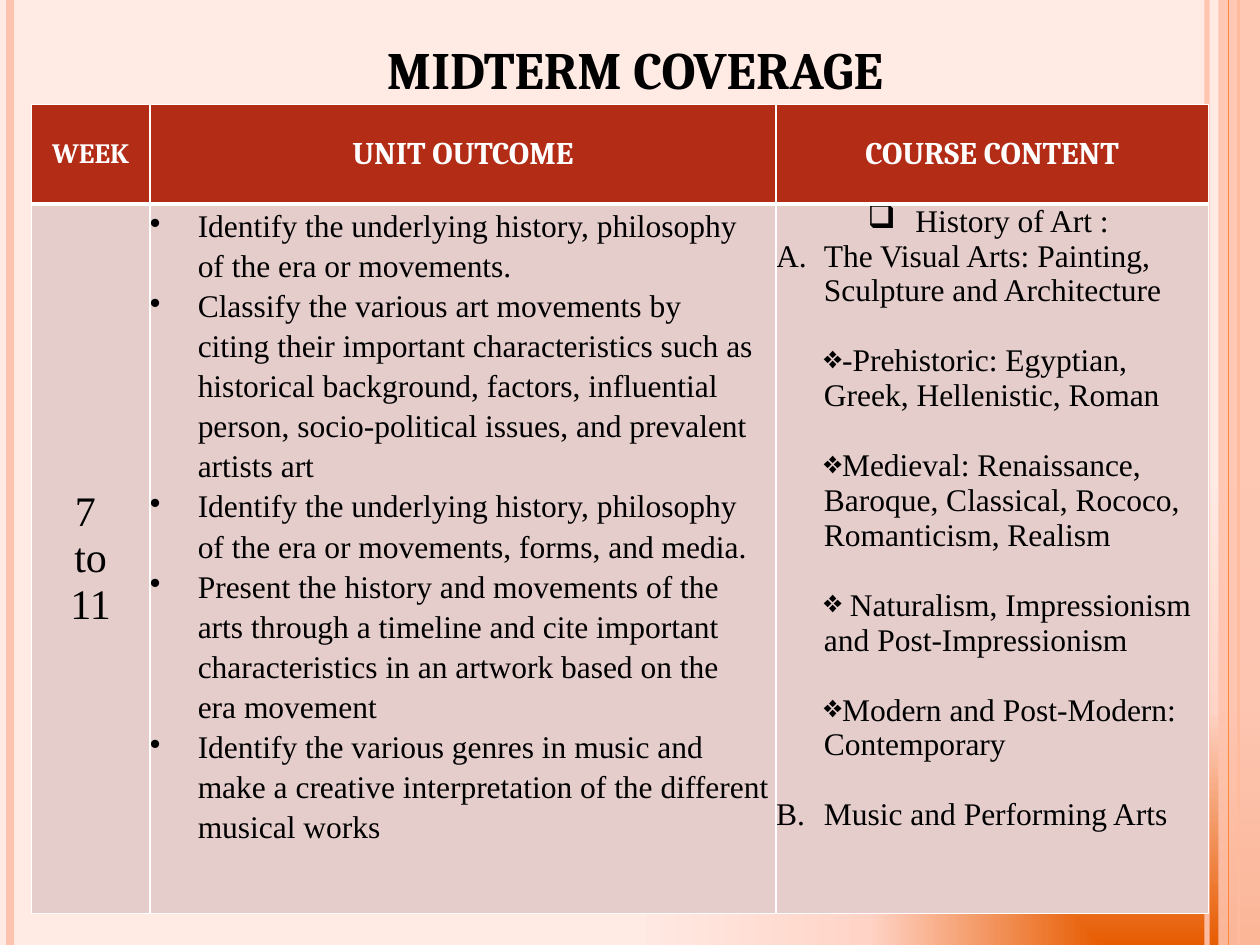
import dataclasses

import lxml.etree
import pptx
import pptx.dml.color
import pptx.enum.shapes
import pptx.enum.text
import pptx.oxml
import pptx.oxml.ns
import pptx.util

Inches = pptx.util.Inches
Align = pptx.enum.text.PP_ALIGN
Anchor = pptx.enum.text.MSO_ANCHOR
qn = pptx.oxml.ns.qn


@dataclasses.dataclass(frozen=True)
class Theme:
    heading_font: str = "Cambria"
    body_font: str = "Times New Roman"
    title_size: int = 30
    week_size: int = 24
    body_size: int = 18
    label_size: int = 16
    black: str = "000000"
    white: str = "FFFFFF"
    header: str = "B32C16"
    body: str = "E5CDCC"
    pale: str = "FEC3AE"
    orange: str = "FE8637"
    gradient: tuple = ((0, "E75C01"), (50, "FFD4C7"), (100, "FFEAE4"))


class SlideBuilder:
    """Draws styled elements on the current slide."""

    def __init__(self, slide, theme):
        self.slide = slide
        self.theme = theme

    def color(self, value):
        return pptx.dml.color.RGBColor.from_string(value)

    def apply(self, target, values):
        for name, value in values.items():
            setattr(target, name, value)

    def child(self, parent, tag, **attributes):
        element = lxml.etree.SubElement(parent, qn(tag))
        for name, value in attributes.items():
            element.set(name, str(value))
        return element

    def background(self):
        self.slide.background.fill.gradient()
        gradient = self.slide.element.find(".//" + qn("a:gradFill"))
        for element in list(gradient):
            gradient.remove(element)
        stops = self.child(gradient, "a:gsLst")
        for position, value in self.theme.gradient:
            stop = self.child(stops, "a:gs", pos=position * 1000)
            self.child(stop, "a:srgbClr", val=value)
        route = self.child(gradient, "a:path", path="rect")
        self.child(route, "a:fillToRect", l=100000, t=100000)

    def transparency(self, shape, alpha):
        color = shape.element.spPr.find(".//" + qn("a:srgbClr"))
        self.child(color, "a:alpha", val=alpha * 1000)

    def vertical_line(self, left, width, value, alpha=100):
        line = self.slide.shapes.add_connector(
            pptx.enum.shapes.MSO_CONNECTOR.STRAIGHT,
            Inches(left), 0, Inches(left), Inches(7.5))
        line.line.width = pptx.util.Pt(width)
        line.line.color.rgb = self.color(value)
        self.child(line.element.spPr, "a:effectLst")
        if alpha < 100:
            self.transparency(line, alpha)

    def band(self, left, top, width, height, value, alpha):
        shape = self.slide.shapes.add_shape(
            pptx.enum.shapes.MSO_SHAPE.RECTANGLE,
            Inches(left), Inches(top), Inches(width), Inches(height))
        shape.shadow.inherit = False
        shape.fill.solid()
        shape.fill.fore_color.rgb = self.color(value)
        shape.line.fill.background()
        self.transparency(shape, alpha)

    def set_text(self, paragraph, text, font, layout):
        paragraph.text = text
        self.apply(paragraph, layout)
        for run in paragraph.runs:
            self.apply(run.font, {**font, "size": pptx.util.Pt(font["size"])})
            run.font.color.rgb = self.color(self.theme.black)

    def title(self, text, left, top, width, height):
        box = self.slide.shapes.add_textbox(
            Inches(left), Inches(top), Inches(width), Inches(height))
        self.apply(box.text_frame, {"word_wrap": True, "vertical_anchor": Anchor.MIDDLE})
        font = {"name": self.theme.heading_font, "size": self.theme.title_size, "bold": True}
        self.set_text(box.text_frame.paragraphs[0], text, font, {"alignment": Align.CENTER})

    def table(self, left, top, columns, rows):
        frame = self.slide.shapes.add_table(
            len(rows), len(columns), Inches(left), Inches(top),
            Inches(sum(columns)), Inches(sum(rows)))
        for column, width in zip(frame.table.columns, columns):
            column.width = Inches(width)
        for row, height in zip(frame.table.rows, rows):
            row.height = Inches(height)
        return frame.table

    def cell(self, cell, fill, top_border, bottom_border):
        cell.fill.solid()
        cell.fill.fore_color.rgb = self.color(fill)
        properties = cell._tc.get_or_add_tcPr()
        borders = {"a:lnL": 1, "a:lnR": 1, "a:lnT": top_border, "a:lnB": bottom_border}
        for index, (tag, width) in enumerate(borders.items()):
            border = self.child(properties, tag, w=pptx.util.Pt(width))
            solid = self.child(border, "a:solidFill")
            self.child(solid, "a:srgbClr", val=self.theme.white)
            properties.insert(index, border)

    def header_cell(self, cell, text, size):
        self.cell(cell, self.theme.header, 1, 3)
        cell.vertical_anchor = Anchor.MIDDLE
        paragraph = cell.text_frame.paragraphs[0]
        font = {"name": self.theme.heading_font, "size": size, "bold": True}
        self.set_text(paragraph, text, font, {"alignment": Align.CENTER})
        paragraph.runs[0].font.color.rgb = self.color(self.theme.white)

    def body_cell(self, cell, items, size, anchor=Anchor.TOP):
        self.cell(cell, self.theme.body, 3, 1)
        self.apply(cell, {"margin_left": 0, "margin_top": 0, "margin_right": 0,
                          "margin_bottom": 0, "vertical_anchor": anchor})
        font = {"name": self.theme.body_font, "size": size, "bold": False}
        for index, (text, bullet, layout) in enumerate(items):
            frame = cell.text_frame
            paragraph = frame.add_paragraph() if index else frame.paragraphs[0]
            self.set_text(paragraph, text, font, layout)
            if bullet:
                self.bullet(paragraph, **bullet)

    def bullet(self, paragraph, hanging=True, char=None, start=1):
        properties = paragraph._p.get_or_add_pPr()
        properties.set("marL", str(Inches(0.38)))
        properties.set("indent", str(-Inches(0.38) if hanging else 0))
        if char:
            self.child(properties, "a:buChar", char=char)
        else:
            self.child(properties, "a:buAutoNum", type="alphaUcPeriod", startAt=start)


OUTCOMES = [
    "Identify the underlying history, philosophy\vof the era or movements.",
    "Classify the various art movements by\vciting their important characteristics such as "
    "historical background, factors, influential person, socio-political issues, and "
    "prevalent artists art",
    "Identify the underlying history, philosophy\vof the era or movements, forms, and media.",
    "Present the history and movements of the\varts through a timeline and cite important "
    "characteristics in an artwork based on the\vera movement",
    "Identify the various genres in music and make a creative interpretation of the "
    "different musical works",
]
PERIODS = [
    "-Prehistoric: Egyptian, Greek, Hellenistic, Roman",
    "Medieval: Renaissance, Baroque, Classical, Rococo, Romanticism, Realism",
    " Naturalism, Impressionism and Post-Impressionism",
    "Modern and Post-Modern: Contemporary",
]


def main():
    presentation = pptx.Presentation()
    presentation.slide_width = Inches(10)
    presentation.slide_height = Inches(7.5)
    theme = Theme()
    builder = SlideBuilder(presentation.slides.add_slide(presentation.slide_layouts[6]), theme)

    builder.background()
    builder.vertical_line(9.58, 3, theme.pale, alpha=93)
    builder.vertical_line(0.08, 4.5, theme.pale)
    builder.vertical_line(9.83, 1.5, theme.orange)
    builder.band(9.67, 0, 0.33, 7.5, theme.pale, alpha=87)
    builder.vertical_line(9.75, 0.75, theme.orange)
    builder.title("MIDTERM COVERAGE", 0.5, 0.17, 9.08, 0.75)

    table = builder.table(0.25, 0.83, [0.94, 4.97, 3.43], [0.79, 5.63])
    headings = {"WEEK": theme.label_size, "UNIT OUTCOME": theme.body_size,
                "COURSE CONTENT": theme.body_size}
    for column, (text, size) in enumerate(headings.items()):
        builder.header_cell(table.cell(0, column), text, size)

    centered = {"alignment": Align.CENTER}
    spaced = {"space_before": pptx.util.Pt(20)}
    weeks = [(text, None, centered) for text in ("7 ", "to", "11")]
    outcomes = [(text, {"char": "•"}, {"line_spacing": 1.15}) for text in OUTCOMES]
    contents = [
        ("History of Art : ", {"char": "❑"}, centered),
        ("The Visual Arts: Painting, Sculpture and Architecture", {"start": 1}, {}),
        *((text, {"char": "❖", "hanging": False}, spaced) for text in PERIODS),
        ("Music and Performing Arts", {"start": 2}, spaced),
    ]
    builder.body_cell(table.cell(1, 0), weeks, theme.week_size, Anchor.MIDDLE)
    builder.body_cell(table.cell(1, 1), outcomes, theme.body_size)
    builder.body_cell(table.cell(1, 2), contents, theme.body_size)
    presentation.save("out.pptx")


if __name__ == "__main__":
    main()
